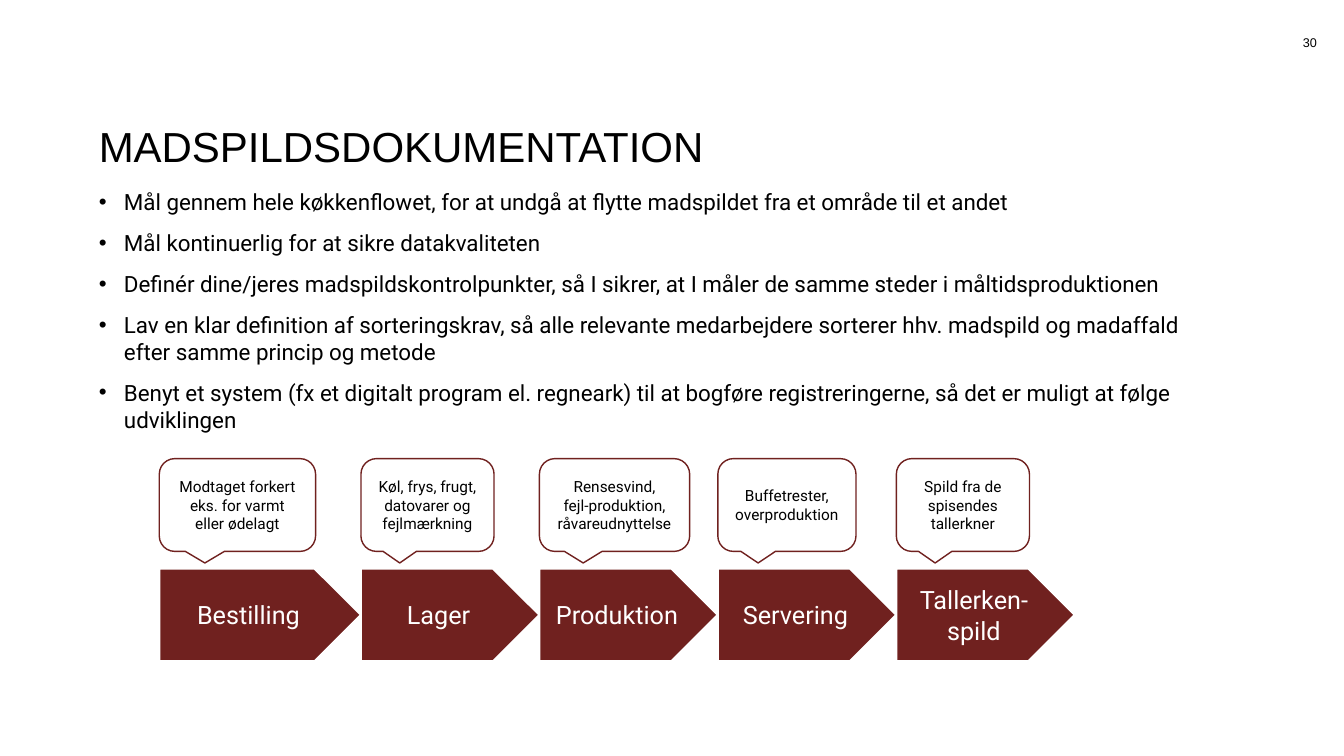
"""Build a slide on documenting food waste through the kitchen flow."""
from lxml import etree
from pptx import Presentation
from pptx import util as u
from pptx.dml.color import RGBColor
from pptx.enum import shapes, text
from pptx.oxml import ns

WINE, WHITE, BLACK = (RGBColor.from_string(code) for code in ("70211F", "FFFFFF", "000000"))
LEFT, CENTER, RIGHT = text.PP_ALIGN.LEFT, text.PP_ALIGN.CENTER, text.PP_ALIGN.RIGHT
TOP, MIDDLE, BOTTOM = text.MSO_ANCHOR.TOP, text.MSO_ANCHOR.MIDDLE, text.MSO_ANCHOR.BOTTOM
THEME = {
    "title": dict(font="Arial", size=30, color=BLACK, align=LEFT, anchor=BOTTOM, spacing=0.9),
    "body": dict(font="Roboto", size=16, color=BLACK, align=LEFT, anchor=TOP, spacing=1.0),
    "number": dict(font="Arial", size=9, color=BLACK, align=RIGHT, anchor=MIDDLE, spacing=1.0),
    "stage": dict(font="Roboto", size=18, color=WHITE, align=CENTER, anchor=MIDDLE, spacing=1.0,
                  fill=WINE, line=WHITE, weight=1.5),
    "callout": dict(font="Roboto", size=11, color=BLACK, align=CENTER, anchor=MIDDLE, spacing=1.0,
                    fill=WHITE, line=WINE, weight=1),
}
MARGIN, CONTENT_WIDTH = 0.98, 10.93
HEADER_TOP, BODY_TOP = 0.32, 1.87
FLOW_LEFT, COLUMN, ROW = 1.58, 1.77, 0.92
CALLOUT_TOP, STAGE_TOP = 4.55, 5.64

BULLETS = [
    "Mål gennem hele køkkenflowet, for at undgå at flytte madspildet fra et område til et andet",
    "Mål kontinuerlig for at sikre datakvaliteten",
    "Definér dine/jeres madspildskontrolpunkter, så I sikrer, at I måler de samme steder i "
    "måltidsproduktionen",
    "Lav en klar definition af sorteringskrav, så alle relevante medarbejdere sorterer hhv. "
    "madspild og madaffald efter samme princip og metode",
    "Benyt et system (fx et digitalt program el. regneark) til at bogføre registreringerne, så "
    "det er muligt at følge udviklingen",
]
STAGES = [
    ("Bestilling", 1.13, 1.55, ["Modtaget forkert eks. for varmt eller ødelagt"]),
    ("Lager", 1, 1.32, ["Køl, frys, frugt, datovarer og fejlmærkning"]),
    ("Produktion", 1, 1.49, ["Rensesvind,", "fejl-produktion, råvareudnyttelse"]),
    ("Servering", 1, 1.37, ["Buffetrester, overproduktion"]),
    ("Tallerken-spild", 1, 1.32, ["Spild fra de spisendes tallerkner"]),
]

deck = Presentation()
deck.slide_width, deck.slide_height = u.Inches(13.33), u.Inches(7.5)
page = deck.slides.add_slide(deck.slide_layouts[6])


def write(box, role, lines, bulleted=False):
    """Fill a box with paragraphs in the style of its role."""
    style = THEME[role]
    frame = box.text_frame
    frame.word_wrap = True
    frame.vertical_anchor = style["anchor"]
    if role in ("title", "body"):
        for side in ("left", "top", "right", "bottom"):
            setattr(frame, f"margin_{side}", 0)
    for index, line in enumerate(lines):
        para = frame.add_paragraph() if index else frame.paragraphs[0]
        if bulleted:
            properties = para._p.get_or_add_pPr()
            properties.set("marL", str(u.Inches(0.25)))
            properties.set("indent", str(-u.Inches(0.25)))
            etree.SubElement(properties, ns.qn("a:buFont"), typeface="Arial")
            etree.SubElement(properties, ns.qn("a:buChar"), char="•")
            para.space_before = u.Pt(10 if index else 0)
        para.alignment, para.line_spacing = style["align"], style["spacing"]
        span = para.add_run()
        span.text = line
        for name, value in {"name": style["font"], "size": u.Pt(style["size"])}.items():
            setattr(span.font, name, value)
        span.font.color.rgb = style["color"]


def draw(kind, role, place, lines):
    """Add a filled, outlined shape with its text."""
    style = THEME[role]
    shape = page.shapes.add_shape(kind, *map(u.Inches, place))
    shape.shadow.inherit = False
    shape.fill.solid()
    shape.fill.fore_color.rgb = style["fill"]
    shape.line.color.rgb = style["line"]
    shape.line.width = u.Pt(style["weight"])
    write(shape, role, lines)


for role, place, lines in (
    ("title", (MARGIN, HEADER_TOP, CONTENT_WIDTH, 1.38), ["MADSPILDSDOKUMENTATION"]),
    ("body", (MARGIN, BODY_TOP, CONTENT_WIDTH, 4.13), BULLETS),
    ("number", (12.42, HEADER_TOP, 0.74, 0.2), ["30"]),
):
    write(page.shapes.add_textbox(*map(u.Inches, place)), role, lines, role == "body")

left = FLOW_LEFT
for name, columns, callout_width, remark in STAGES:
    draw(shapes.MSO_SHAPE.PENTAGON, "stage", (left, STAGE_TOP, columns * COLUMN, ROW), [name])
    draw(shapes.MSO_SHAPE.ROUNDED_RECTANGULAR_CALLOUT, "callout",
         (left, CALLOUT_TOP, callout_width, ROW), remark)
    left += columns * COLUMN

deck.save("out.pptx")
